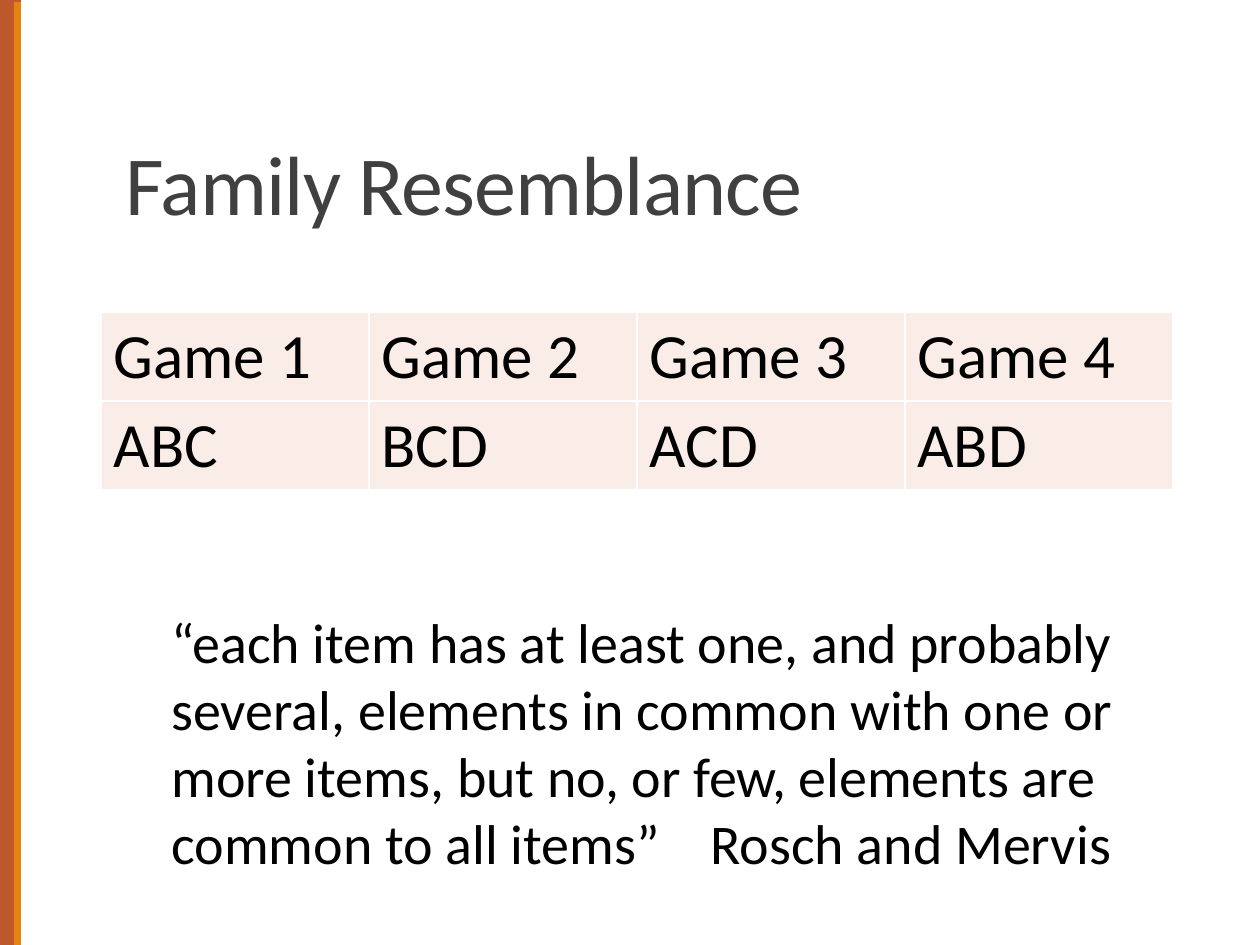
from lxml.etree import SubElement
from pptx import Presentation
from pptx.dml.color import RGBColor
from pptx.enum.shapes import MSO_SHAPE as Kind
from pptx.enum.text import MSO_ANCHOR as Anchor
from pptx.oxml.ns import qn
from pptx.util import Pt

RUST = RGBColor(0xBD, 0x58, 0x2C)
AMBER = RGBColor(0xE4, 0x83, 0x12)
GREY = RGBColor(0x40, 0x40, 0x40)
BLACK = RGBColor(0, 0, 0)
BLUSH = RGBColor(0xFA, 0xED, 0xE7)
FONT = "Calibri"
GAMES = [
    ("Game 1", "Game 2", "Game 3", "Game 4"),
    ("ABC", "BCD", "ACD", "ABD"),
]
QUOTE = (
    "“each item has at least one, and probably several, elements in common "
    "with one or more items, but no, or few, elements are common to all "
    "items”\tRosch and Mervis"
)


def px(n):
    """Turn pixels into EMU."""
    return round(n * 914400 / 126)


def write(frame, text, size, color):
    """Put one styled paragraph in a frame and return it."""
    frame.word_wrap = True
    para = frame.paragraphs[0]
    para.text = text
    font = para.runs[0].font
    font.name, font.size = FONT, Pt(size)
    font.color.rgb = color
    return para


def add_bar(slide, box, color):
    """Draw a plain filled bar."""
    bar = slide.shapes.add_shape(Kind.RECTANGLE, *map(px, box))
    bar.shadow.inherit = False
    bar.fill.solid()
    bar.fill.fore_color.rgb = color
    bar.line.fill.background()


def add_title(slide, text, box):
    """Add the heading, set tight on the bottom of its box."""
    frame = slide.shapes.add_textbox(*map(px, box)).text_frame
    para = write(frame, text, 48, GREY)
    frame.vertical_anchor = Anchor.BOTTOM
    para.line_spacing = 0.85
    para.runs[0].font._element.set("spc", "-50")


def add_quote(slide, text, box, stop):
    """Add the quote, with a tab stop for its authors."""
    frame = slide.shapes.add_textbox(*map(px, box)).text_frame
    para = write(frame, text, 32, BLACK)
    tabs = SubElement(para._p.get_or_add_pPr(), qn("a:tabLst"))
    SubElement(tabs, qn("a:tab"), pos=str(px(stop)), algn="l")


def style_cell(cell):
    """Give a cell white edges and a pale fill."""
    props = cell._tc.get_or_add_tcPr()
    for side in ("L", "R", "T", "B"):
        edge = SubElement(props, qn(f"a:ln{side}"), w=str(Pt(1)))
        fill = SubElement(edge, qn("a:solidFill"))
        SubElement(fill, qn("a:srgbClr"), val="FFFFFF")
    cell.fill.solid()
    cell.fill.fore_color.rgb = BLUSH


def add_grid(slide, rows, left, top, wide, high):
    """Add a table of equal cells."""
    count = len(rows[0])
    box = (left, top, wide * count, high * len(rows))
    table = slide.shapes.add_table(len(rows), count, *map(px, box)).table
    for r, row in enumerate(rows):
        for c, text in enumerate(row):
            cell = table.cell(r, c)
            write(cell.text_frame, text, 36, BLACK)
            style_cell(cell)


def main():
    """Build and save the slide."""
    deck = Presentation()
    deck.slide_width, deck.slide_height = px(1260), px(945)
    slide = deck.slides.add_slide(deck.slide_layouts[6])
    add_bar(slide, (0, 0, 21, 945), RUST)
    add_bar(slide, (14, 2, 7, 943), AMBER)
    add_title(slide, "Family Resemblance", (113, 39, 1040, 200))
    add_grid(slide, GAMES, 101, 312, 268, 89)
    add_quote(slide, QUOTE, (159, 601, 1013, 285), 539)
    deck.save("out.pptx")


if __name__ == "__main__":
    main()
